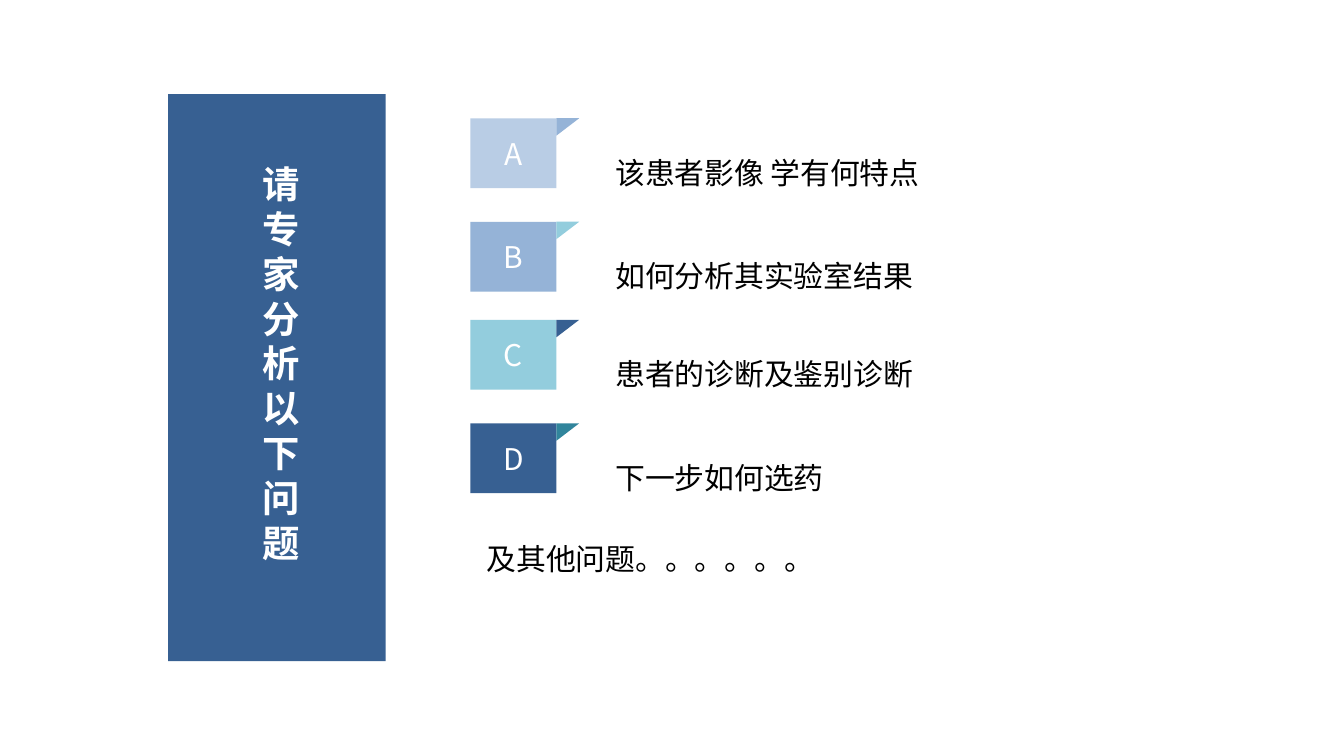
from lxml import etree
from pptx import Presentation
from pptx.dml.color import RGBColor
from pptx.enum.shapes import MSO_SHAPE
from pptx.enum.text import MSO_ANCHOR, MSO_AUTO_SIZE, PP_ALIGN
from pptx.oxml.ns import qn
from pptx.util import Inches, Pt

RECT, TRIANGLE = MSO_SHAPE.RECTANGLE, MSO_SHAPE.ISOSCELES_TRIANGLE
TOP, MIDDLE = MSO_ANCHOR.TOP, MSO_ANCHOR.MIDDLE
LEFT, CENTER = PP_ALIGN.LEFT, PP_ALIGN.CENTER
FONT = "Noto Sans CJK SC"
COLORS = {
    "navy": "376092", "pale": "B9CDE5", "blue": "95B3D7",
    "aqua": "93CDDD", "teal": "31859C", "white": "FFFFFF", "black": "000000",
}


def add_block(shapes, kind, box, color):
    sp = shapes.add_shape(kind, *map(Inches, box))
    sp.shadow.inherit = False
    sp.fill.solid()
    sp.fill.fore_color.rgb = RGBColor.from_string(COLORS[color])
    sp.line.fill.background()
    return sp


def write(sp, text, color, size=16, bold=False, align=LEFT, anchor=TOP, insets=(0.1, 0.05)):
    """Fill a shape with one paragraph at a fixed line height of 1.2 times its size."""
    tf = sp.text_frame
    tf.word_wrap = True
    tf.auto_size = MSO_AUTO_SIZE.NONE
    tf.vertical_anchor = anchor
    tf.margin_left = tf.margin_right = Inches(insets[0])
    tf.margin_top = tf.margin_bottom = Inches(insets[1])
    p = tf.paragraphs[0]
    p.text = text
    p.alignment = align
    p.line_spacing = Pt(size * 1.2)
    p.font.name = FONT
    p.font.size = Pt(size)
    p.font.bold = bold
    p.font.color.rgb = RGBColor.from_string(COLORS[color])
    props = p._p.pPr.find(qn("a:defRPr"))
    etree.SubElement(props, qn("a:ea")).set("typeface", FONT)


prs = Presentation()
prs.slide_width = Inches(10)
prs.slide_height = prs.slide_width * 9 // 16
s = prs.slides.add_slide(prs.slide_layouts[5])

# Title on its side panel, one character to a line
NARROW = (0.07, 0.04)
title = s.shapes.title
title.left, title.top = Inches(1.88), Inches(1.16)
title.width, title.height = Inches(0.49), Inches(3.14)
write(title, "请专家分析以下问题", "white", size=20, bold=True, insets=NARROW)
panel = add_block(s.shapes, RECT, (1.25, 0.7, 1.62, 4.22), "navy")
title._element.addprevious(panel._element)

# Lettered questions: a tag, its folded corner and the text beside it
TAG_X, TAG_W, TAG_H = 3.5, 0.64, 0.52
FOLD_W, FOLD_H = 0.17, 0.13
questions = [
    ("A", 0.88, "pale", "blue", 3.33, "该患者影像 学有何特点"),
    ("B", 1.65, "blue", "aqua", 3.47, "如何分析其实验室结果"),
    ("C", 2.38, "aqua", "navy", 3.14, "患者的诊断及鉴别诊断"),
    ("D", 3.15, "navy", "teal", 2.07, "下一步如何选药"),
]
for letter, y, tag_color, fold_color, width, question in questions:
    group = s.shapes.add_group_shape().shapes
    tag = add_block(group, RECT, (TAG_X, y, TAG_W, TAG_H), tag_color)
    write(tag, letter, "white", align=CENTER, anchor=MIDDLE)

    # A quarter turn swaps the fold's width and height about its centre
    shift = (FOLD_W - FOLD_H) / 2
    fold_box = (TAG_X + TAG_W + shift, y - shift, FOLD_H, FOLD_W)
    fold = add_block(group, TRIANGLE, fold_box, fold_color)
    fold.adjustments[0] = 0
    fold.rotation = 90

    label = group.add_textbox(Inches(4.48), Inches(y + 0.22), Inches(width), Inches(0.37))
    write(label, question, "black")

closing = s.shapes.add_textbox(Inches(3.55), Inches(3.98), Inches(4.39), Inches(0.35))
write(closing, "及其他问题。。。。。。", "black", insets=NARROW)

prs.save("out.pptx")
